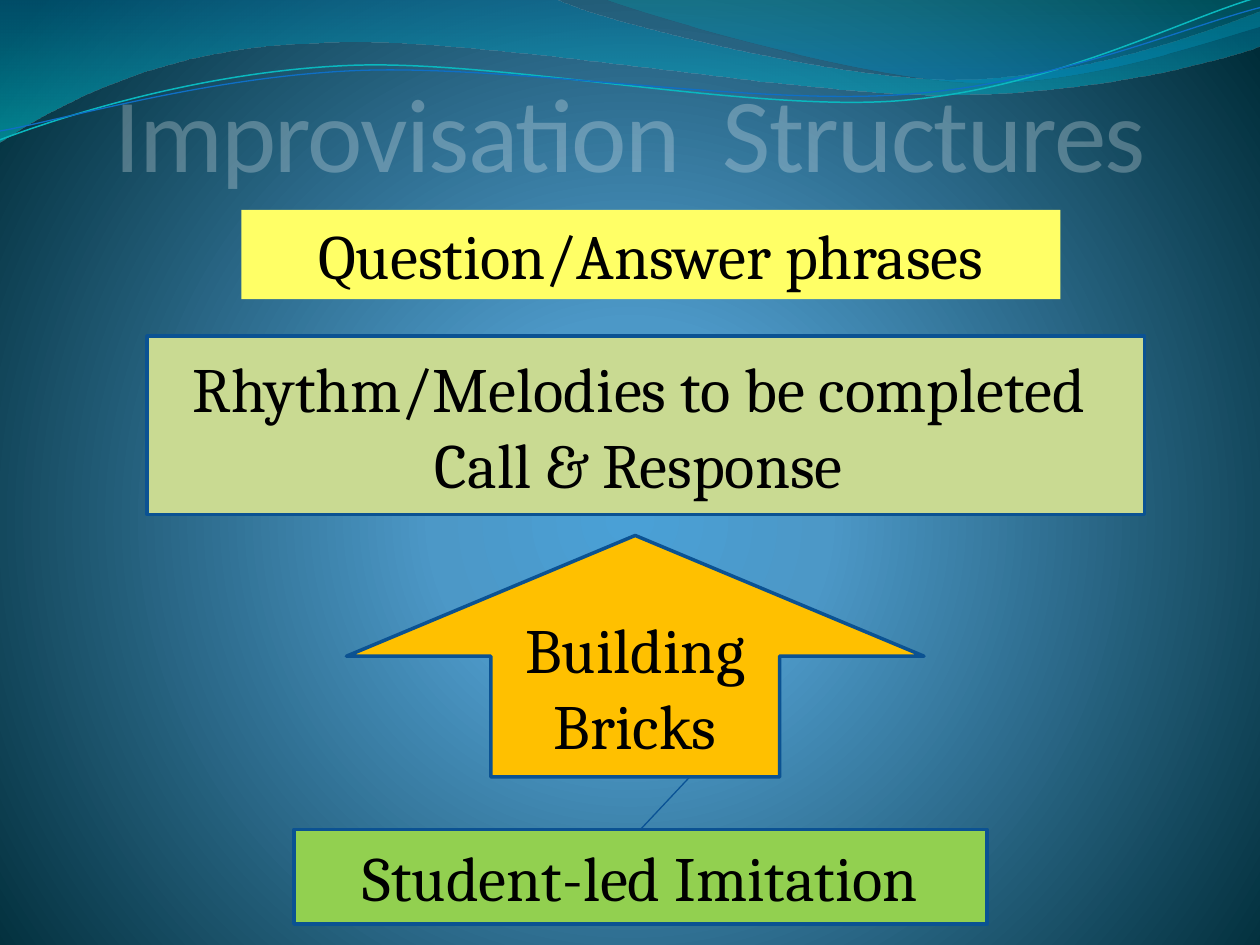
from math import cos, radians, sin

from lxml import etree
from pptx import Presentation
from pptx.dml.color import RGBColor
from pptx.enum.shapes import MSO_CONNECTOR, MSO_SHAPE
from pptx.enum.text import MSO_ANCHOR, MSO_AUTO_SIZE, PP_ALIGN
from pptx.oxml import parse_xml
from pptx.oxml.ns import nsdecls, qn
from pptx.util import Inches, Pt

COLORS = {
    "white": "FFFFFF", "black": "000000",
    "glow": "4AA0D6", "sky": "4C98C7", "night": "002C38",
    "wave_blue": "0074A1", "wave_cyan": "00C6CF",
    "crest_teal": "00A1A9", "crest_blue": "008BBF",
    "cyan_line": "0AB8BF", "blue_line": "0F6FC6",
    "border": "0B5292", "link": "095295",
    "green": "92D050", "olive": "C9DA92", "orange": "FFC000", "yellow": "FFFF66",
}
RGB = {name: RGBColor.from_string(value) for name, value in COLORS.items()}
UNIT = Inches(1) / 12  # the layout grid has twelve steps to the inch
TILT = 357.3


def paint_gradient(fill, parent, stops, direction):
    """Fill with a gradient; stops are (position %, colour name, opacity %)."""
    fill.solid()
    stop_xml = "".join(
        f'<a:gs pos="{pos * 1000}"><a:srgbClr val="{COLORS[name]}">'
        f'<a:alpha val="{opacity * 1000}"/></a:srgbClr></a:gs>'
        for pos, name, opacity in stops)
    gradient = parse_xml(f'<a:gradFill {nsdecls("a")} rotWithShape="1">'
                         f'<a:gsLst>{stop_xml}</a:gsLst>{direction}</a:gradFill>')
    parent.replace(parent.find(qn("a:solidFill")), gradient)


def draw_curve(shapes, place, pieces, closed, rotation=0):
    """Trace pieces of one point (straight) or three (Bézier), in slide inches."""
    left, top, width, height = place
    ends = [(Inches(piece[-2]), Inches(piece[-1])) for piece in pieces]
    builder = shapes.build_freeform(*ends[0])
    builder.add_line_segments(ends[1:], close=closed)
    curve = builder.convert_to_shape()
    curve.left, curve.top, curve.width, curve.height = map(Inches, place)
    curve.rotation = rotation
    curve.shadow.inherit = False

    # Bend the segments, in the coordinates of the box before it is turned
    outline = curve.element.find(".//" + qn("a:path"))
    outline.set("w", str(Inches(width)))
    outline.set("h", str(Inches(height)))
    turn_cos, turn_sin = cos(radians(-rotation)), sin(radians(-rotation))
    segments = [node for node in outline if node.tag != qn("a:close")]
    for segment, piece in zip(segments, pieces):
        if len(piece) == 6:
            segment.addnext(etree.Element(qn("a:cubicBezTo")))
            bend = segment.getnext()
            outline.remove(segment)
            segment = bend
        for point in list(segment):
            segment.remove(point)
        for x, y in zip(piece[::2], piece[1::2]):
            dx, dy = x - left - width / 2, y - top - height / 2
            point = etree.SubElement(segment, qn("a:pt"))
            point.set("x", str(Inches(dx * turn_cos - dy * turn_sin + width / 2)))
            point.set("y", str(Inches(dx * turn_sin + dy * turn_cos + height / 2)))
    return curve


deck = Presentation()
deck.slide_width, deck.slide_height = Inches(10), Inches(7.5)
page = deck.slides.add_slide(deck.slide_layouts[5])
shapes = page.shapes
title = shapes.title

# Background
background = page.background.fill
background.solid()
paint_gradient(
    background, page.element.find(".//" + qn("p:bgPr")),
    [(0, "glow", 100), (25, "sky", 100), (100, "night", 100)],
    '<a:path path="circle"><a:fillToRect l="10000" t="110000" r="10000" b="100000"/></a:path>')

# Waves along the top
waves = [
    ((-0.01, -0.01, 10.02, 1.14),
     [(0, 0), (4.4, -0.01), (4.76, 0.17, 6.64, 0.63, 7.58, 0.63),
      (8.53, 0.63, 9.58, 0.26, 10, 0.09), (10.01, 0.36),
      (9.83, 0.44, 8.7, 0.76, 7.46, 0.75), (6.22, 0.75, 3.82, 0.28, 2.57, 0.34),
      (1.29, 0.36, 0.46, 0.83, -0.01, 1.13), (0, 0)],
     [(0, "wave_blue", 45), (100, "wave_cyan", 55)]),
    ((4.79, -0.01, 5.21, 0.7),
     [(4.79, -0.01), (5.09, 0.11, 6.82, 0.62, 7.69, 0.65),
      (8.56, 0.69, 9.61, 0.32, 10, 0.21), (10, 0), (4.79, -0.01)],
     [(0, "crest_teal", 30), (80, "crest_blue", 45)]),
]
for place, pieces, stops in waves:
    wave = draw_curve(shapes, place, pieces, closed=True)
    wave.line.fill.background()
    paint_gradient(wave.fill, wave.element.spPr, stops, '<a:lin ang="5400000" scaled="0"/>')

ripples = [
    ((-0.02, 0.22, 10.02, 0.71),
     [(0, 1.11), (0.48, 0.93, 1.58, 0.57, 2.77, 0.52), (3.95, 0.47, 5.93, 0.89, 7.13, 0.8),
      (8.33, 0.71, 9.38, 0.15, 9.98, -0.02)], "cyan_line", 0.85),
    ((-0.02, 0.3, 10.03, 0.58),
     [(0, 1.04), (0.47, 0.96, 1.64, 0.61, 2.83, 0.56), (4.03, 0.51, 5.97, 0.84, 7.17, 0.75),
      (8.36, 0.67, 9.41, 0.21, 10, 0.06)], "blue_line", 0.75),
]
for place, pieces, color, width in ripples:
    ripple = draw_curve(shapes, place, pieces, closed=False, rotation=TILT)
    ripple.fill.background()
    ripple.line.color.rgb = RGB[color]
    ripple.line.width = Pt(width)

# Title, in front of the waves
shapes._spTree.append(title.element)
title.left, title.top, title.width, title.height = (int(n * UNIT) for n in (6, 11, 108, 8))
frame = title.text_frame
frame.auto_size = MSO_AUTO_SIZE.NONE
frame.vertical_anchor = MSO_ANCHOR.BOTTOM
para = frame.paragraphs[0]
para.alignment = PP_ALIGN.CENTER
span = para.add_run()
span.text = "Improvisation  Structures"
span.font.name, span.font.size = "Calibri", Pt(60)
span.font.color.rgb = RGB["white"]
span.font._element.set("spc", "-100")
white = span.font._element.find(".//" + qn("a:srgbClr"))
etree.SubElement(white, qn("a:alpha")).set("val", "25000")

# Link from the imitation box, running up behind the arrow
link = shapes.add_connector(MSO_CONNECTOR.STRAIGHT,
                            *(int(n * UNIT) for n in (61, 79, 68.5, 71)))
link.line.color.rgb = RGB["link"]
link.line.width = Pt(0.75)
etree.SubElement(link.line._get_or_add_ln(), qn("a:tailEnd")).set("type", "arrow")
etree.SubElement(link.element.spPr, qn("a:effectLst"))

# Steps: preset, (left, top, width, height) in grid units, fill, border, anchor, lines
RECT, UP_ARROW = MSO_SHAPE.RECTANGLE, MSO_SHAPE.UP_ARROW
MIDDLE, TOP = MSO_ANCHOR.MIDDLE, MSO_ANCHOR.TOP
steps = [
    (RECT, (28, 79, 66, 9), "green", True, MIDDLE, ["Student-led Imitation"]),
    (RECT, (14, 32, 95, 17), "olive", True, MIDDLE,
     ["Rhythm/Melodies to be completed ", "Call & Response "]),
    (UP_ARROW, (33, 51, 55, 23), "orange", True, MIDDLE, ["Building", "Bricks"]),
    (RECT, (23, 20, 78, 8.5), "yellow", False, TOP, ["Question/Answer phrases"]),
]
for preset, place, color, bordered, anchor, lines in steps:
    box = shapes.add_shape(preset, *(int(n * UNIT) for n in place))
    box.shadow.inherit = False
    box.fill.solid()
    box.fill.fore_color.rgb = RGB[color]
    if bordered:
        box.line.color.rgb = RGB["border"]
        box.line.width = Pt(2)
    else:
        box.line.fill.background()
    frame = box.text_frame
    frame.word_wrap = True
    frame.vertical_anchor = anchor
    for number, line in enumerate(lines):
        para = frame.add_paragraph() if number else frame.paragraphs[0]
        para.alignment = PP_ALIGN.CENTER
        span = para.add_run()
        span.text = line
        span.font.name, span.font.size = "Cambria", Pt(36)
        span.font.color.rgb = RGB["black"]

deck.save("out.pptx")
